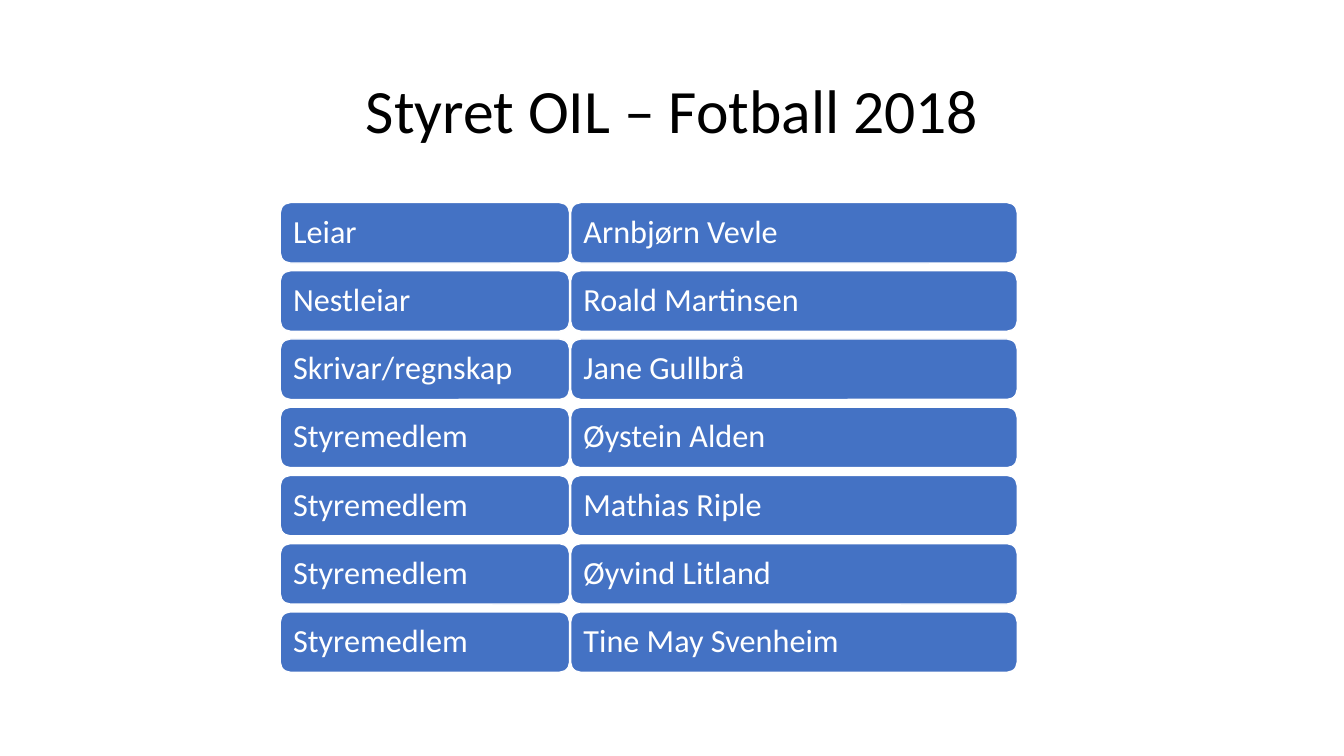
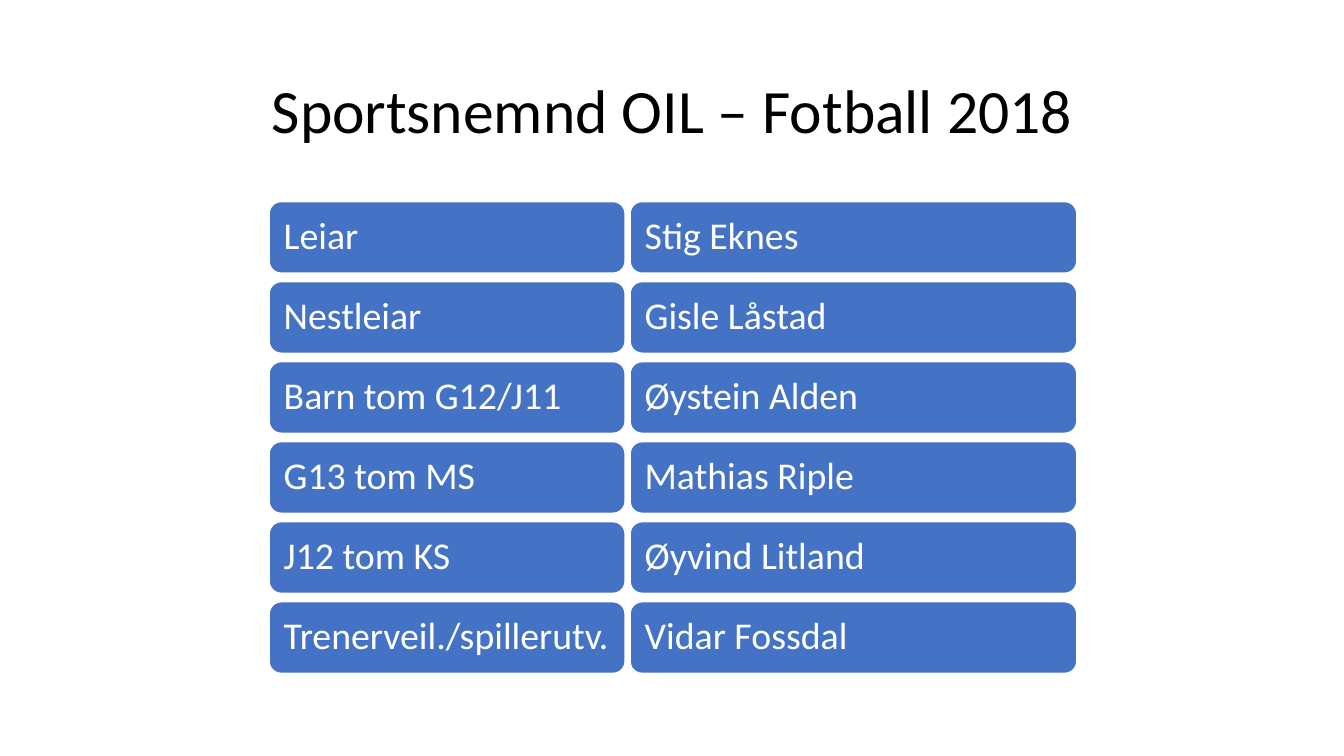
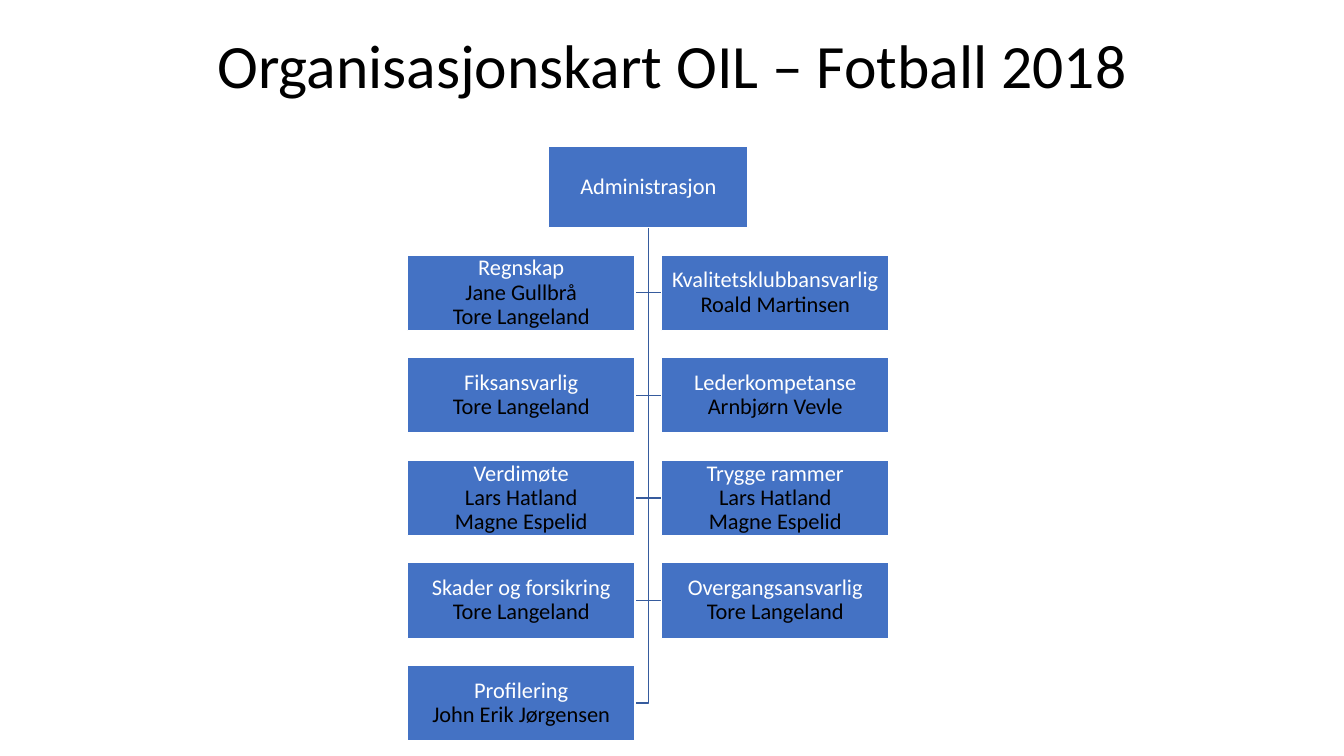
from pptx import Presentation
from pptx.dml.color import RGBColor
from pptx.enum.shapes import MSO_SHAPE
from pptx.enum.text import MSO_ANCHOR, MSO_AUTO_SIZE, PP_ALIGN
from pptx.util import Inches, Pt

RECT = MSO_SHAPE.RECTANGLE
ROUND = MSO_SHAPE.ROUNDED_RECTANGLE
LEFT, CENTER = PP_ALIGN.LEFT, PP_ALIGN.CENTER
MIDDLE = MSO_ANCHOR.MIDDLE
NO_FIT = MSO_AUTO_SIZE.NONE

FONT = "Calibri"
BLUE, NAVY = "4472C4", "365B9D"
WHITE, BLACK, INK = "FFFFFF", "000000", "010000"
TITLE_ONLY = 5

BOARD = [
    ("Leiar", "Arnbjørn Vevle"),
    ("Nestleiar", "Roald Martinsen"),
    ("Skrivar/regnskap", "Jane Gullbrå"),
    ("Styremedlem", "Øystein Alden"),
    ("Styremedlem", "Mathias Riple"),
    ("Styremedlem", "Øyvind Litland"),
    ("Styremedlem", "Tine May Svenheim"),
]
SPORTS = [
    ("Leiar", "Stig Eknes"),
    ("Nestleiar", "Gisle Låstad"),
    ("Barn tom G12/J11", "Øystein Alden"),
    ("G13 tom MS", "Mathias Riple"),
    ("J12 tom KS", "Øyvind Litland"),
    ("Trenerveil./spillerutv.", "Vidar Fossdal"),
]
# Role first, then the people; the roles fill the chart left to right.
ROLES = [
    ("Regnskap", "Jane Gullbrå", "Tore Langeland"),
    ("Kvalitetsklubbansvarlig", "Roald Martinsen"),
    ("Fiksansvarlig", "Tore Langeland"),
    ("Lederkompetanse", "Arnbjørn Vevle"),
    ("Verdimøte", "Lars Hatland", "Magne Espelid"),
    ("Trygge rammer", "Lars Hatland", "Magne Espelid"),
    ("Skader og forsikring", "Tore Langeland"),
    ("Overgangsansvarlig", "Tore Langeland"),
    ("Profilering", "John Erik Jørgensen"),
]


def color(code):
    return RGBColor.from_string(code)


def write(frame, lines, size, align):
    """Fill a frame with one paragraph of (text, colour) lines."""
    frame.word_wrap = True
    frame.auto_size = NO_FIT
    frame.vertical_anchor = MIDDLE
    para = frame.paragraphs[0]
    para.alignment = align
    para.line_spacing = 0.9
    for i, (text, code) in enumerate(lines):
        if i:
            para.add_line_break()
        run = para.add_run()
        run.text = text
        run.font.name = FONT
        run.font.size = Pt(size)
        run.font.color.rgb = color(code)


def add_slide(deck, title, top=0.4, height=1.45):
    slide = deck.slides.add_slide(deck.slide_layouts[TITLE_ONLY])
    head = slide.shapes.title
    head.left, head.top = Inches(0.92), Inches(top)
    head.width, head.height = Inches(11.5), Inches(height)
    write(head.text_frame, [(title, BLACK)], 44, CENTER)
    return slide


def add_box(slide, kind, area, lines, size, align, inset):
    box = slide.shapes.add_shape(kind, *map(Inches, area))
    box.shadow.inherit = False
    box.fill.solid()
    box.fill.fore_color.rgb = color(BLUE)
    box.line.color.rgb = color(WHITE)
    box.line.width = Pt(1)
    frame = box.text_frame
    frame.margin_left = Inches(inset)
    frame.margin_right = frame.margin_top = frame.margin_bottom = Inches(0.01)
    write(frame, lines, size, align)


def add_elbow(slide, start, end):
    """Draw a line straight down from start, then sideways to end."""
    (x1, y1), (x2, y2) = (tuple(map(Inches, spot)) for spot in (start, end))
    pen = slide.shapes.build_freeform(x1, y1)
    pen.add_line_segments([(x1, y2), (x2, y2)], close=False)
    elbow = pen.convert_to_shape()
    elbow.shadow.inherit = False
    elbow.fill.background()
    elbow.line.color.rgb = color(NAVY)
    elbow.line.width = Pt(1)


def add_roster(slide, area, rows, cols, high, size, inset):
    """Stack rows of roles and names in area; cols holds both widths."""
    left, top, width, height = area
    pitch = (height - high) / (len(rows) - 1)
    starts = (left, left + width - cols[1])
    for i, row in enumerate(rows):
        for x, wide, text in zip(starts, cols, row):
            add_box(slide, ROUND, (x, top + i * pitch, wide, high),
                    [(text, WHITE)], size, LEFT, inset)


def add_chart(slide, area):
    """Draw the root box, the role boxes in two columns and their lines."""
    left, top, width, height = area
    wide, high = 2.26, 0.75
    root_w, root_h, first = 1.98, 0.81, 1.08
    pitch = (height - first - high) / ((len(ROLES) - 1) // 2)
    mid = left + width / 2
    spots = [(left + i % 2 * (width - wide), top + first + i // 2 * pitch)
             for i in range(len(ROLES))]
    for x, y in reversed(spots):
        edge = x if x > mid else x + wide
        add_elbow(slide, (mid, top + root_h), (edge, y + high / 2))
    add_box(slide, RECT, (mid - root_w / 2, top, root_w, root_h),
            [("Administrasjon", WHITE)], 16, CENTER, 0.01)
    for (x, y), (role, *names) in zip(spots, ROLES):
        lines = [(role, WHITE)] + [(name, INK) for name in names]
        add_box(slide, RECT, (x, y, wide, high), lines, 16, CENTER, 0.01)


def main():
    deck = Presentation()
    deck.slide_width, deck.slide_height = Inches(13.33), Inches(7.5)

    board = add_slide(deck, "Styret OIL – Fotball 2018")
    add_roster(board, (2.78, 2.01, 7.31, 4.66), BOARD, (2.87, 4.43), 0.6, 23, 0.1)

    sports = add_slide(deck, "Sportsnemnd OIL – Fotball 2018")
    add_roster(sports, (2.67, 2, 8.01, 4.68), SPORTS, (3.53, 4.43), 0.71, 27, 0.11)

    chart = add_slide(deck, "Organisasjonskart OIL – Fotball 2018", 0.23, 0.9)
    add_chart(chart, (4.04, 1.45, 4.78, 5.9))

    deck.save("out.pptx")


if __name__ == "__main__":
    main()
